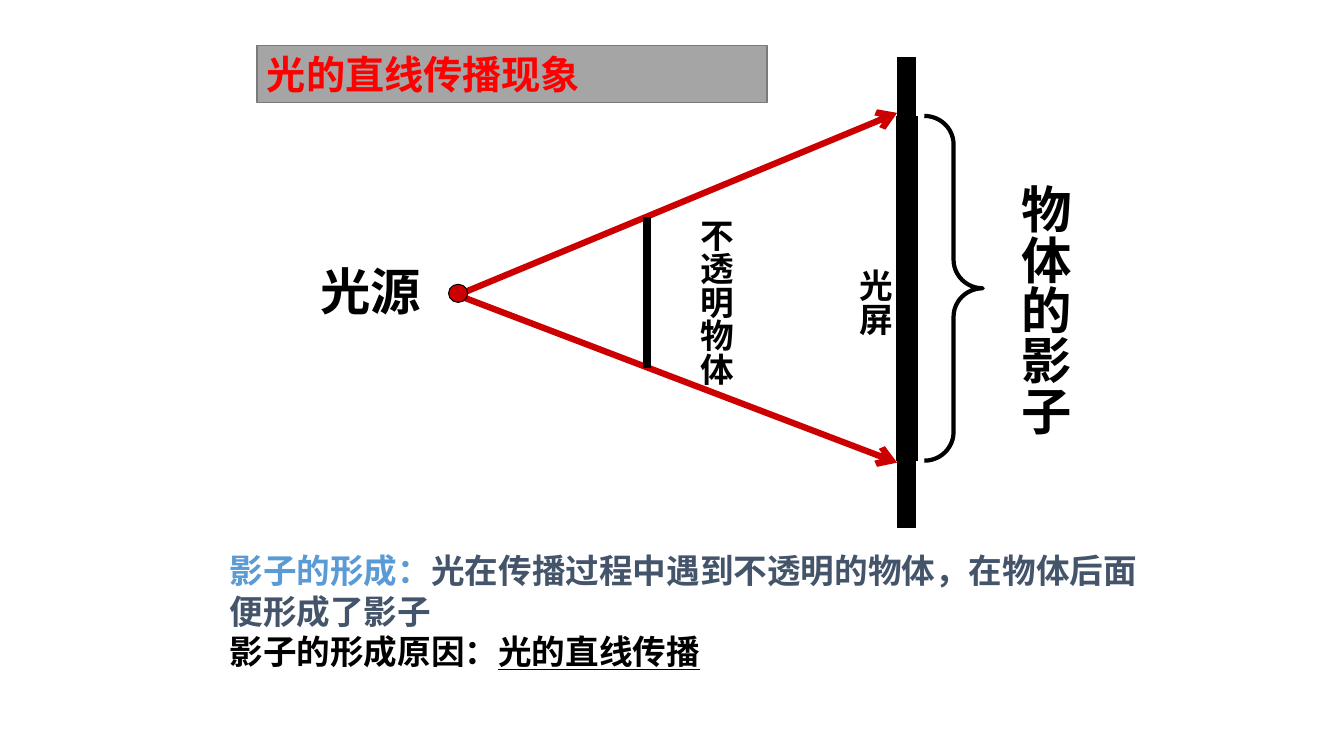
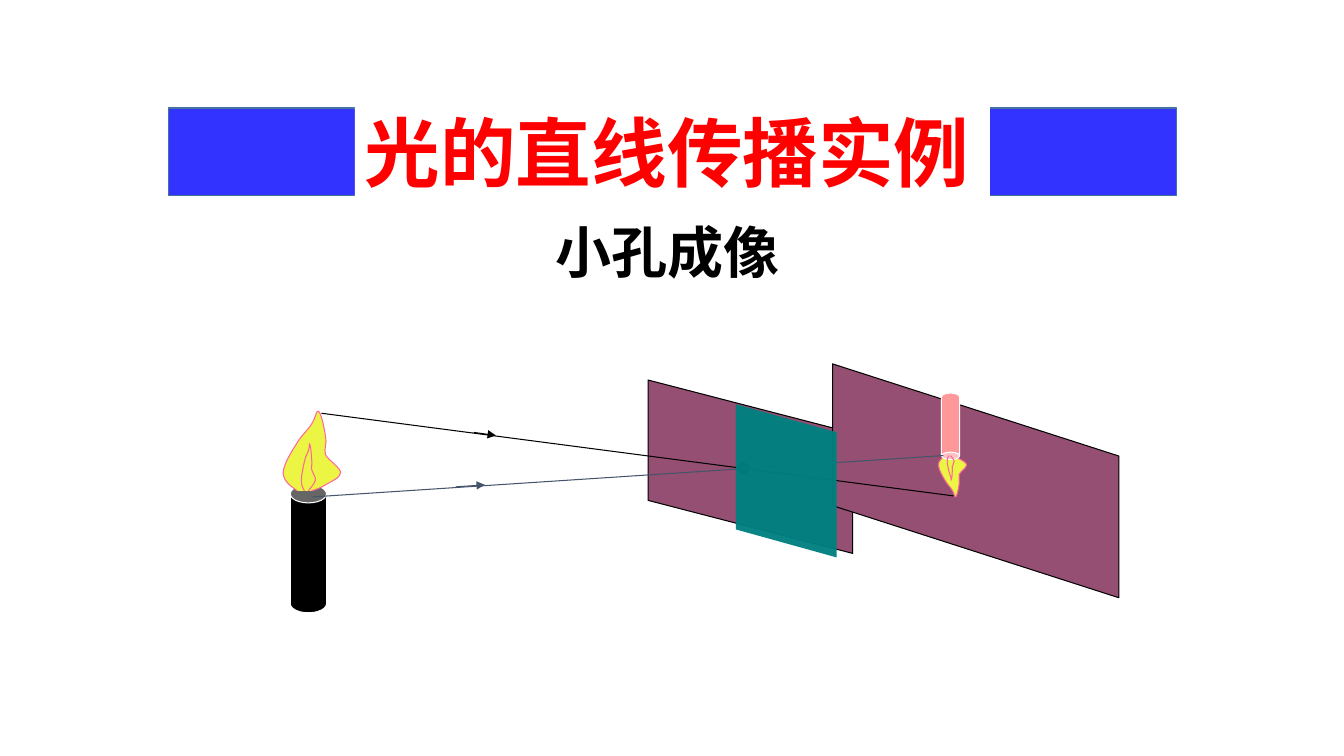
from pptx import Presentation
from pptx.dml.color import RGBColor
from pptx.enum.shapes import MSO_CONNECTOR, MSO_SHAPE
from pptx.enum.text import MSO_ANCHOR, PP_ALIGN
from pptx.oxml.ns import qn
from pptx.util import Inches, Pt
from lxml import etree

BLACK, WHITE, RED = "000000", "FFFFFF", "FF0000"
RAY, SLATE, SKY = "CC0000", "44546A", "5B9BD5"
PLUM, TEAL, FLAME, PINK = "954F72", "008080", "ECF444", "FF6699"
CJK, CJK_JP, SERIF, SANS = "Noto Sans CJK SC", "Noto Sans CJK JP", "Times New Roman", "Arial"

# Slide 1 content: paragraphs of (text, font, colour, underlined)
EXPLANATION = [
    [("影子的形成：", CJK, SKY, False),
     ("光在传播过程中遇到不透明的物体，在物体后面便形成了影子", CJK, SLATE, False)],
    [("影子的形成原因：", SERIF, BLACK, False), ("光的直线传播", CJK, BLACK, True)],
]
# text, box, size, font, vertical, wrap
LABELS = [
    ("光源", (3.08, 2.53, 1.2, 0.7), 36, SERIF, False, False),
    ("不透明物体", (6.75, 2.07, 0.6, 1.77), 24, SERIF, True, False),
    ("光屏", (8.33, 2.57, 0.6, 1.58), 24, SANS, True, True),
    ("物体的影子", (9.91, 1.73, 0.81, 2.61), 36, SERIF, True, False),
]
# from, to, colour, width, arrowhead
SHADOW_LINES = [
    ((4.51, 2.94), (8.9, 1.12), RAY, 4.5, "arrow"),
    ((4.57, 2.94), (8.9, 4.59), RAY, 4.5, "arrow"),
    ((6.42, 2.15), (6.42, 3.65), BLACK, 6, None),
    ((9, 1.15), (9, 4.57), BLACK, 16, None),
]

# Slide 2 content: boards as visible left, top, width, height, slant and fill
BACK_BOARDS = [(6.43, 3.77, 2.03, 1.72, 0.306, PLUM), (8.26, 3.61, 2.84, 2.32, 0.394, PLUM)]
FRONT_BOARD = (7.3, 4.01, 1, 1.52, 0.278, TEAL)
# Each ray, then the short arrow that lies on it
PINHOLE_LINES = [
    ((3.19, 4.1), (9.46, 4.92), BLACK, 0.75, None),
    ((4.7, 4.29), (4.92, 4.32), BLACK, 0.75, "triangle"),
    ((3.1, 4.93), (9.36, 4.52), SLATE, 0.75, None),
    ((4.52, 4.83), (4.81, 4.81), SLATE, 0.75, "triangle"),
]
# Flame outlines: a start point, then three Bezier points for each curve
OUTER_FLAME = [
    (2.95, 4.87), (2.88, 4.82), (2.81, 4.77), (2.81, 4.69), (2.81, 4.61), (2.9, 4.47), (2.95, 4.39),
    (3, 4.31), (3.06, 4.26), (3.09, 4.21), (3.13, 4.16), (3.14, 4.06), (3.16, 4.08),
    (3.19, 4.1), (3.22, 4.26), (3.23, 4.33), (3.25, 4.4), (3.21, 4.45), (3.23, 4.51),
    (3.26, 4.57), (3.38, 4.64), (3.38, 4.69), (3.38, 4.74), (3.28, 4.78), (3.23, 4.81),
    (3.19, 4.84), (3.12, 4.86), (3.09, 4.87)]
INNER_FLAME = [
    (3.02, 4.87), (3, 4.84), (2.99, 4.81), (2.99, 4.76), (2.99, 4.71), (3.01, 4.63), (3.02, 4.58),
    (3.03, 4.53), (3.05, 4.5), (3.06, 4.47), (3.07, 4.44), (3.07, 4.39), (3.07, 4.4),
    (3.08, 4.41), (3.09, 4.5), (3.09, 4.54), (3.1, 4.59), (3.09, 4.62), (3.09, 4.65),
    (3.1, 4.69), (3.13, 4.73), (3.13, 4.76), (3.13, 4.79), (3.1, 4.81), (3.09, 4.83),
    (3.08, 4.85), (3.06, 4.86), (3.06, 4.87)]


def rgb(color):
    return RGBColor.from_string(color)


def paint(sp, fill=None, line=None, width=0.75):
    sp.shadow.inherit = False
    if fill:
        sp.fill.solid()
        sp.fill.fore_color.rgb = rgb(fill)
    else:
        sp.fill.background()
    if line:
        sp.line.color.rgb = rgb(line)
        sp.line.width = Pt(width)
    else:
        sp.line.fill.background()
    return sp


def add_shape(s, kind, box, fill=None, line=None, width=0.75, adj=()):
    sp = s.shapes.add_shape(kind, *map(Inches, box))
    for i, value in enumerate(adj):
        sp.adjustments[i] = value
    return paint(sp, fill, line, width)


def add_run(p, text, size=24, font=CJK, color=BLACK, underline=False):
    r = p.add_run()
    r.text = text
    r.font.size, r.font.bold, r.font.name = Pt(size), True, font
    r.font.color.rgb = rgb(color)
    if underline:
        r.font.underline = True
    ea = etree.Element(qn("a:ea"), typeface=font if "CJK" in font else CJK)
    r.font._element.find(qn("a:latin")).addnext(ea)


def add_text(s, text, box=None, sp=None, vertical=False, wrap=True, **fmt):
    """Write text in a new box, or in the shape sp; a list holds paragraphs of runs."""
    sp = sp or s.shapes.add_textbox(*map(Inches, box))
    tf = sp.text_frame
    tf.word_wrap, tf.vertical_anchor = wrap, MSO_ANCHOR.TOP
    if vertical:
        tf._txBody.bodyPr.set("vert", "eaVert")
    paragraphs = text if isinstance(text, list) else [[(text,)]]
    for i, runs in enumerate(paragraphs):
        p = tf.add_paragraph() if i else tf.paragraphs[0]
        p.alignment = PP_ALIGN.LEFT
        for content, *style in runs:
            add_run(p, content, **(dict(zip(("font", "color", "underline"), style)) | fmt))


def add_line(s, start, end, color, width=0.75, head=None):
    c = s.shapes.add_connector(MSO_CONNECTOR.STRAIGHT, *map(Inches, (*start, *end)))
    c.line.color.rgb = rgb(color)
    c.line.width = Pt(width)
    if head:
        etree.SubElement(c.line._get_or_add_ln(), qn("a:tailEnd"), type=head)
    etree.SubElement(c._element.spPr, qn("a:effectLst"))


def add_board(s, left, top, width, height, slant, fill, line=None):
    """Parallelogram turned on its side, given by the box it covers when turned."""
    box = (left + (width - height) / 2, top + (height - width) / 2, height, width)
    sp = add_shape(s, MSO_SHAPE.PARALLELOGRAM, box, fill, line, adj=[slant])
    sp.rotation = 270
    return sp


def add_curve(s, points, fill=None):
    """Freeform whose segments, three by three, become Bezier curves."""
    start, *rest = [(Inches(x), Inches(y)) for x, y in points]
    fb = s.shapes.build_freeform(*start, scale=1.0)
    fb.add_line_segments(rest, close=False)
    sp = paint(fb.convert_to_shape(), fill, PINK)
    segments = list(sp._element.spPr.iter(qn("a:lnTo")))
    for i in range(0, len(segments), 3):
        curve = etree.Element(qn("a:cubicBezTo"))
        segments[i].addprevious(curve)
        for segment in segments[i:i + 3]:
            curve.append(segment[0])
            segment.getparent().remove(segment)


def inverted(points):
    """The flame's image: upside down, at about half size."""
    return [(9.31 + (x - 2.81) * 0.49, 4.52 + (4.87 - y) * 0.52) for x, y in points]


def shadow_slide(s):
    add_text(s, EXPLANATION, (2.18, 5.41, 9.3, 1.72), size=24)
    for line in SHADOW_LINES[:3]:
        add_line(s, *line)
    add_shape(s, MSO_SHAPE.OVAL, (4.45, 2.82, 0.19, 0.18), RAY, BLACK)
    # Screen, with the shadow on it
    add_shape(s, MSO_SHAPE.RECTANGLE, (8.9, 0.57, 0.18, 4.66), BLACK, BLACK)
    add_line(s, *SHADOW_LINES[3])
    add_shape(s, MSO_SHAPE.RIGHT_BRACE, (9.17, 1.15, 0.58, 3.42), None, BLACK, 3, adj=(0.488, 0.5))
    for text, box, size, font, vertical, wrap in LABELS:
        add_text(s, text, box, vertical=vertical, wrap=wrap, size=size, font=font)
    title = add_shape(s, MSO_SHAPE.RECTANGLE, (2.55, 0.45, 5.06, 0.57), "A5A5A5", "7A7A7A", 1)
    add_text(s, "光的直线传播现象", sp=title, size=28, font=SANS, color=RED)


def pinhole_slide(s):
    # Title on a blue band
    add_shape(s, MSO_SHAPE.RECTANGLE, (1.67, 1.07, 10, 0.87), "3333FF", "43739E", 1)
    title = add_shape(s, MSO_SHAPE.RECTANGLE, (3.52, 1, 6.3, 1.01), WHITE)
    add_text(s, "光的直线传播实例", sp=title, size=54, color=RED)
    add_text(s, "小孔成像", (5.41, 2.11, 3.23, 0.77), size=40, font=CJK_JP)
    # Pinhole board and screen
    pinhole_board, screen = BACK_BOARDS
    add_board(s, *pinhole_board, line=BLACK)
    add_shape(s, MSO_SHAPE.OVAL, (7.32, 4.59, 0.11, 0.11), BLACK, BLACK)
    add_board(s, *screen, line=BLACK)
    # Candle and its image
    add_shape(s, MSO_SHAPE.CAN, (2.88, 4.81, 0.36, 1.27), BLACK, WHITE, adj=[0.5])
    add_curve(s, OUTER_FLAME, FLAME)
    add_curve(s, INNER_FLAME)
    add_curve(s, inverted(OUTER_FLAME), FLAME)
    can = add_shape(s, MSO_SHAPE.CAN, (9.34, 3.9, 0.18, 0.66), "FF9999", WHITE, adj=[0.41])
    can._element.spPr.find(qn("a:xfrm")).set("flipV", "1")
    add_curve(s, inverted(INNER_FLAME))
    # Rays through the hole, behind a nearly opaque board
    for line in PINHOLE_LINES:
        add_line(s, *line)
    front = add_board(s, *FRONT_BOARD)
    clr = front._element.spPr.find(qn("a:solidFill")).find(qn("a:srgbClr"))
    etree.SubElement(clr, qn("a:alpha"), val="96000")


def main():
    prs = Presentation()
    prs.slide_width, prs.slide_height = Inches(40 / 3), Inches(7.5)
    for build in (shadow_slide, pinhole_slide):
        build(prs.slides.add_slide(prs.slide_layouts[6]))
    prs.save("out.pptx")


if __name__ == "__main__":
    main()
